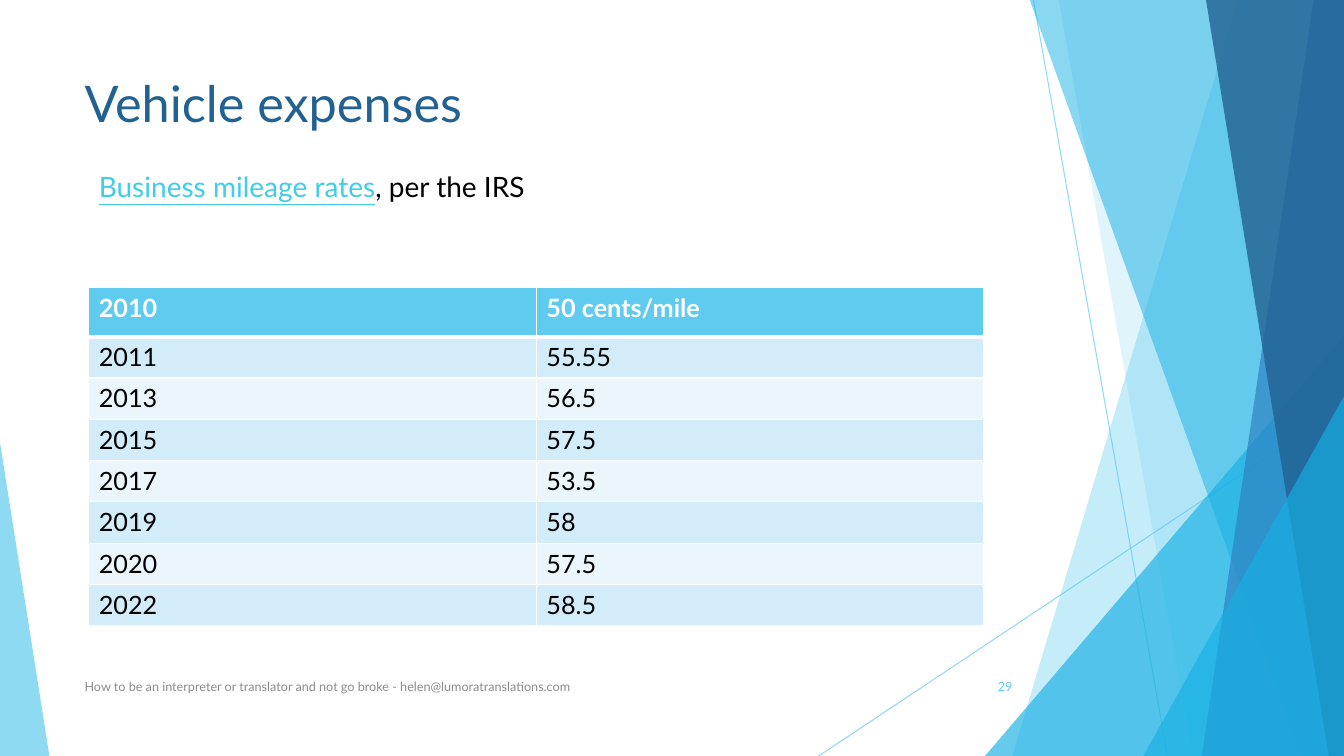
from typing import NamedTuple

from lxml import etree
from pptx import Presentation
from pptx.dml.color import RGBColor
from pptx.enum.shapes import MSO_CONNECTOR, MSO_SHAPE
from pptx.enum.text import MSO_ANCHOR, MSO_AUTO_SIZE, PP_ALIGN
from pptx.oxml.ns import qn
from pptx.util import Pt

STRAIGHT = MSO_CONNECTOR.STRAIGHT
TRIANGLE = MSO_SHAPE.ISOSCELES_TRIANGLE
TOP, MIDDLE = MSO_ANCHOR.TOP, MSO_ANCHOR.MIDDLE
LEFT, RIGHT = PP_ALIGN.LEFT, PP_ALIGN.RIGHT
NO_FIT = MSO_AUTO_SIZE.NONE

EMU_PER_PX = 9144
W, H = 1333, 750
FONT = "Lato"
SKY, CYAN, BLUE, NAVY = "5FCBEF", "17B0E4", "2E83C3", "226292"
LINK, GREY, BLACK, WHITE = "3FCDE7", "8C8C8C", "000000", "FFFFFF"
BANDS = ("D2ECF9", "EAF6FC")


class Ray(NamedTuple):
    x1: int
    y1: int
    x2: int
    y2: int


class Blade(NamedTuple):
    top_x: int
    bottom_x: int
    color: str
    opacity: int


class Wedge(NamedTuple):
    x: int
    y: int
    w: int
    apex: float
    color: str
    opacity: int


class Span(NamedTuple):
    text: str
    size: int
    color: str
    bold: bool = False
    underline: bool = False


RAYS = [Ray(1025, 0, 1158, H), Ray(W, 403, 812, H)]
FACETS = [
    Blade(1228, 1004, SKY, 36),
    Blade(1050, 1183, SKY, 20),
    Wedge(977, 333, 356, 1, CYAN, 66),
    Blade(1021, 1291, CYAN, 50),
    Blade(1303, 1192, BLUE, 70),
    Blade(1196, 1318, NAVY, 80),
    Wedge(1134, 393, 199, 1, CYAN, 66),
    Wedge(0, 439, 49, 0, SKY, 70),
]
RATES = [
    ("2010", "50 cents/mile"),
    ("2011", "55.55"),
    ("2013", "56.5"),
    ("2015", "57.5"),
    ("2017", "53.5"),
    ("2019", "58"),
    ("2020", "57.5"),
    ("2022", "58.5"),
]


def px(n: int) -> int:
    return n * EMU_PER_PX


def rgb(color: str) -> RGBColor:
    return RGBColor.from_string(color)


def set_opacity(element, percent: int) -> None:
    for clr in element.iter(qn("a:srgbClr")):
        etree.SubElement(clr, qn("a:alpha"), val=str(percent * 1000))


def draw_ray(s, ray: Ray) -> None:
    line = s.shapes.add_connector(STRAIGHT, *map(px, ray))
    line.line.color.rgb = rgb(SKY)
    line.line.width = Pt(0.75)
    sp_pr = line.element.spPr
    set_opacity(sp_pr, 70)
    etree.SubElement(sp_pr, qn("a:effectLst"))


def draw_facet(s, facet: Blade | Wedge) -> None:
    if isinstance(facet, Blade):
        outline = s.shapes.build_freeform(facet.top_x, -1, EMU_PER_PX)
        outline.add_line_segments([(W, -1), (W, H), (facet.bottom_x, H)])
        sp = outline.convert_to_shape()
    else:
        box = (facet.x, facet.y, facet.w, H - facet.y)
        sp = s.shapes.add_shape(TRIANGLE, *map(px, box))
        sp.adjustments[0] = facet.apex
    sp.shadow.inherit = False
    sp.fill.solid()
    sp.fill.fore_color.rgb = rgb(facet.color)
    sp.line.fill.background()
    set_opacity(sp.element.spPr, facet.opacity)


def write(tf, spans: list[Span], align=LEFT):
    p = tf.paragraphs[0]
    p.alignment = align
    for span in spans:
        r = p.add_run()
        r.text = span.text
        r.font.name = FONT
        r.font.size = Pt(span.size)
        r.font.color.rgb = rgb(span.color)
        r.font.bold = span.bold
        r.font.underline = span.underline
    return p


def fill_box(sp, box: tuple[int, int, int, int], spans: list[Span], anchor, align=LEFT):
    sp.left, sp.top, sp.width, sp.height = map(px, box)
    tf = sp.text_frame
    tf.word_wrap = True
    tf.auto_size = NO_FIT
    tf.vertical_anchor = anchor
    return write(tf, spans, align)


def add_label(s, box: tuple[int, int, int, int], span: Span, align=LEFT) -> None:
    fill_box(s.shapes.add_textbox(*map(px, box)), box, [span], MIDDLE, align)


def set_borders(cell, top: int, bottom: int) -> None:
    tc_pr = cell._tc.get_or_add_tcPr()
    for side, points in (("L", 1), ("R", 1), ("T", top), ("B", bottom)):
        ln = etree.SubElement(tc_pr, qn(f"a:ln{side}"), w=str(Pt(points)))
        fill = etree.SubElement(ln, qn("a:solidFill"))
        etree.SubElement(fill, qn("a:srgbClr"), val=WHITE)


def add_rates_table(s) -> None:
    frame = s.shapes.add_table(len(RATES), 2, px(88), px(285), px(888), px(336))
    table = frame.table
    for col in table.columns:
        col.width = px(444)
    for i, rates in enumerate(RATES):
        header = i == 0
        table.rows[i].height = px(49 if header else 41)
        for j, text in enumerate(rates):
            cell = table.cell(i, j)
            set_borders(cell, 3 if i == 1 else 1, 3 if header else 1)
            cell.fill.solid()
            cell.fill.fore_color.rgb = rgb(SKY if header else BANDS[(i - 1) % 2])
            write(cell.text_frame, [Span(text, 18, WHITE if header else BLACK, header)])


def main() -> None:
    prs = Presentation()
    prs.slide_width, prs.slide_height = px(W), px(H)
    s = prs.slides.add_slide(prs.slide_layouts[1])
    title, body = s.placeholders

    for ray in RAYS:
        draw_ray(s, ray)
    for facet in FACETS:
        draw_facet(s, facet)

    for sp in (title, body):
        sp.element.getparent().append(sp.element)
    fill_box(title, (74, 67, 940, 144), [Span("Vehicle expenses", 36, NAVY)], TOP)
    mileage = [
        Span("Business mileage rates", 20, LINK, underline=True),
        Span(", per the IRS", 20, BLACK),
    ]
    p = fill_box(body, (88, 163, 940, 424), mileage, TOP)
    p.space_before = Pt(10)
    p_pr = p._p.get_or_add_pPr()
    p_pr.set("marL", "0")
    p_pr.set("indent", "0")
    etree.SubElement(p_pr, qn("a:buNone"))

    add_label(s, (939, 661, 75, 40), Span("29", 9, SKY), RIGHT)
    add_rates_table(s)
    footer = "How to be an interpreter or translator and not go broke - helen@lumoratranslations.com"
    add_label(s, (74, 661, 689, 40), Span(footer, 9, GREY))
    prs.save("out.pptx")


if __name__ == "__main__":
    main()
